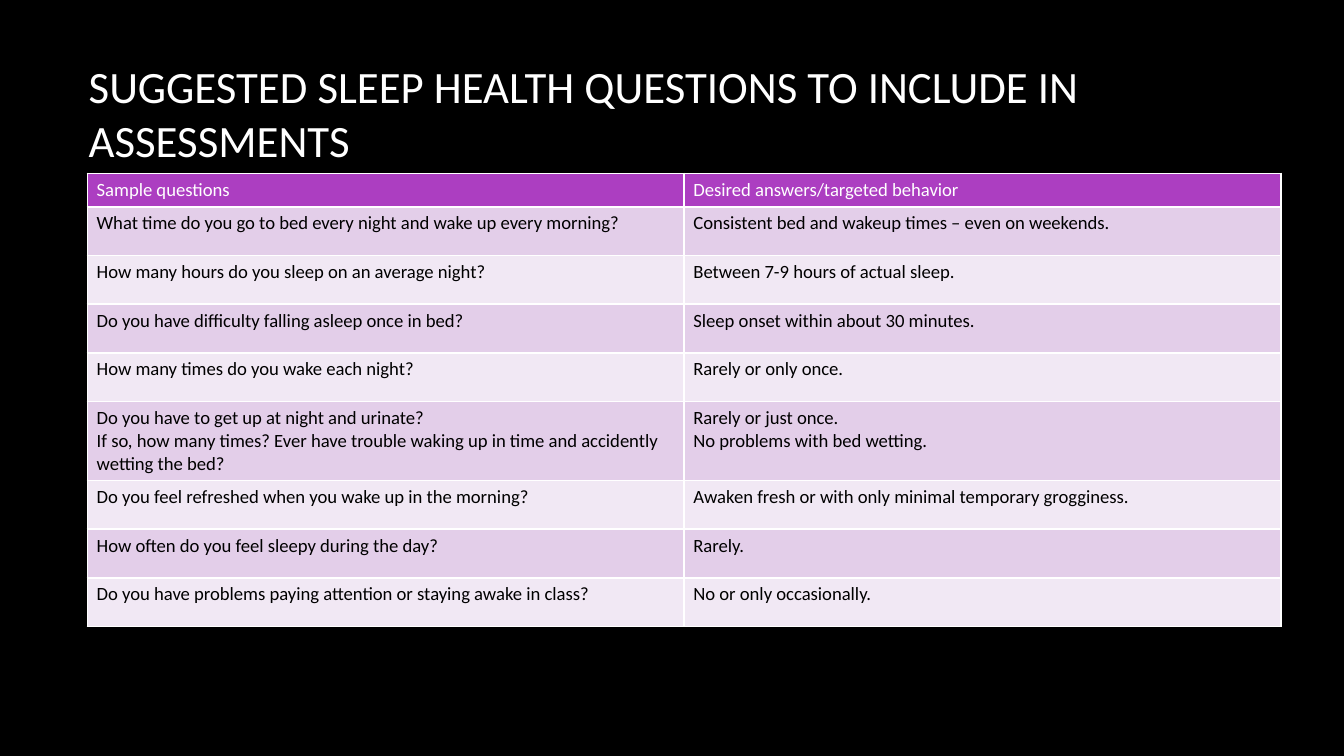
from lxml.etree import SubElement
from pptx import Presentation
from pptx.dml.color import RGBColor
from pptx.enum.text import MSO_ANCHOR, PP_ALIGN
from pptx.oxml.ns import qn
from pptx.util import Inches, Pt

FONT = "Calibri"
WHITE, BLACK, PURPLE = "FFFFFF", "000000", "AC3EC1"
BANDS = ["E3CEE9", "F1E8F4"]
ROWS = [
    ("Sample questions", "Desired answers/targeted behavior"),
    ("What time do you go to bed every night and wake up every morning?",
     "Consistent bed and wakeup times – even on weekends."),
    ("How many hours do you sleep on an average night?",
     "Between 7-9 hours of actual sleep."),
    ("Do you have difficulty falling asleep once in bed?",
     "Sleep onset within about 30 minutes."),
    ("How many times do you wake each night?", "Rarely or only once."),
    ("Do you have to get up at night and urinate?\n"
     "If so, how many times? Ever have trouble waking up in time and "
     "accidently wetting the bed?",
     "Rarely or just once.\nNo problems with bed wetting."),
    ("Do you feel refreshed when you wake up in the morning?",
     "Awaken fresh or with only minimal temporary grogginess."),
    ("How often do you feel sleepy during the day?", "Rarely."),
    ("Do you have problems paying attention or staying awake in class?",
     "No or only occasionally."),
]


def style_text(frame, size, color):
    for para in frame.paragraphs:
        para.alignment = PP_ALIGN.LEFT
        para.font.name = FONT
        para.font.size = Pt(size)
        para.font.bold = False
        para.font.color.rgb = RGBColor.from_string(color)


def set_borders(cell):
    """Draw white lines round a cell; the fill must be set afterwards."""
    properties = cell._tc.get_or_add_tcPr()
    for side in "LRTB":
        line = SubElement(properties, qn(f"a:ln{side}"), w=str(Pt(1)))
        fill = SubElement(line, qn("a:solidFill"))
        SubElement(fill, qn("a:srgbClr"), val=WHITE)


deck = Presentation()
deck.slide_width = Inches(10)
deck.slide_height = deck.slide_width * 9 // 16
height = deck.slide_height

page = deck.slides.add_slide(deck.slide_layouts[5])
page.background.fill.solid()
page.background.fill.fore_color.rgb = RGBColor.from_string(BLACK)

title = page.shapes.title
title.left, title.top = Inches(0.56), Inches(0.24)
title.width, title.height = Inches(8.31), Inches(1.19)
title.text_frame.text = "SUGGESTED SLEEP HEALTH QUESTIONS TO INCLUDE IN ASSESSMENTS"
title.text_frame.word_wrap = True
title.text_frame.vertical_anchor = MSO_ANCHOR.MIDDLE
style_text(title.text_frame, 24, WHITE)

table_height = Inches(4.08)
table_frame = page.shapes.add_table(
    len(ROWS), 2, Inches(0.65), Inches(1.29), Inches(8.88), table_height)
table = table_frame.table

for row_index, texts in enumerate(ROWS):
    is_header = row_index == 0
    has_two_paragraphs = "\n" in texts[0]
    share = 23 if is_header else 9.7 if has_two_paragraphs else 15.5
    table.rows[row_index].height = int(height / share)
    for column_index, text in enumerate(texts):
        cell = table.cell(row_index, column_index)
        cell.text = text
        cell.margin_left = cell.margin_right = Inches(0.07)
        cell.margin_top = cell.margin_bottom = Inches(0.04)
        style_text(cell.text_frame, 10, WHITE if is_header else BLACK)
        set_borders(cell)
        cell.fill.solid()
        cell.fill.fore_color.rgb = RGBColor.from_string(
            PURPLE if is_header else BANDS[(row_index - 1) % 2])

table_frame.height = table_height
deck.save("out.pptx")
